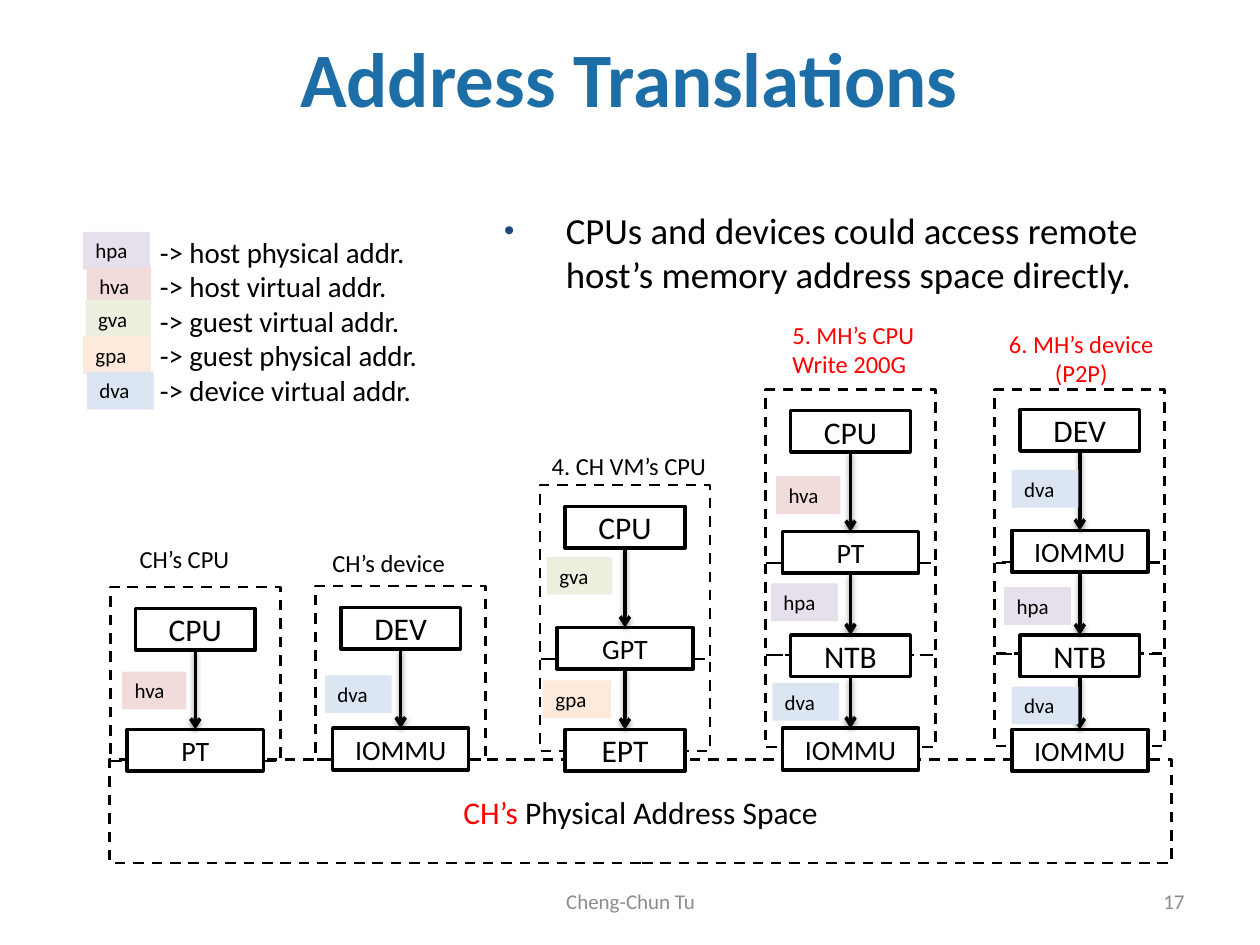
from itertools import pairwise
from lxml import etree
from pptx import Presentation, util as u
from pptx.dml.color import RGBColor
from pptx.enum import dml, shapes, text
from pptx.oxml import parse_xml
from pptx.oxml.ns import nsdecls, qn

THEME = {
    "font": "Calibri",
    "title": "1D6EA7", "ink": "000000", "accent": "FF0000",
    "muted": "8C8C8C", "bullet": "1F497D", "paper": "FFFFFF",
    "title_pt": 44, "body_pt": 21, "node_pt": 18, "table_pt": 16,
    "legend_pt": 16.5, "caption_pt": 14, "tag_pt": 12,
}
TAGS = {
    "hpa": ("E6E0EC", 0.53), "hva": ("F2DCDB", 0.51), "gva": ("EBF1DE", 0.52),
    "gpa": ("FDEADA", 0.54), "dva": ("DCE6F2", 0.53),
}
TITLE = "Address Translations"
BODY = "CPUs and devices could access remote host’s memory address space directly."
LEGEND = [
    ("hpa", "-> host physical addr.", 0.66, 1.84),
    ("hva", "-> host virtual addr.", 0.69, 2.12),
    ("gva", "-> guest virtual addr.", 0.68, 2.38),
    ("gpa", "-> guest physical addr.", 0.66, 2.67),
    ("dva", "-> device virtual addr.", 0.69, 2.95),
]
COLUMNS = [
    {"center": 6.75, "caption": ["5. MH’s CPU", "Write 200G"], "color": "accent",
     "caption_at": (6.19, 2.49, 1.19, 0.57),
     "zones": [(3.09, 1.38), (4.47, 0.73), (5.2, 0.73)],
     "nodes": [("CPU", 3.26), ("PT", 4.22), ("NTB", 5.04), ("IOMMU", 5.78)],
     "tags": [("hva", 6.16, 3.78), ("hpa", 6.12, 4.63), ("dva", 6.13, 5.42)]},
    {"center": 4.96, "caption": ["4. CH VM’s CPU"], "color": "ink",
     "caption_at": (4.28, 3.53, 1.69, 0.34),
     "zones": [(3.85, 1.38), (5.23, 0.73)],
     "nodes": [("CPU", 4.02), ("GPT", 4.98), ("EPT", 5.79)],
     "tags": [("gva", 4.34, 4.42), ("gpa", 4.31, 5.4)]},
    {"center": 1.55, "caption": ["CH’s CPU"], "color": "ink",
     "caption_at": (1.01, 4.27, 1.1, 0.34),
     "zones": [(4.66, 1.38)],
     "nodes": [("CPU", 4.83), ("PT", 5.79)],
     "tags": [("hva", 0.97, 5.33)]},
    {"center": 3.18, "caption": ["CH’s device"], "color": "ink",
     "caption_at": (2.54, 4.3, 1.36, 0.34),
     "zones": [(4.65, 1.38)],
     "nodes": [("DEV", 4.82), ("IOMMU", 5.78)],
     "tags": [("dva", 2.58, 5.36)]},
    {"center": 8.57, "caption": ["6. MH’s device", "(P2P)"], "color": "accent",
     "caption_at": (7.91, 2.56, 1.37, 0.57),
     "zones": [(3.09, 1.38), (4.46, 0.73), (5.19, 0.73)],
     "nodes": [("DEV", 3.25), ("IOMMU", 4.21), ("NTB", 5.04), ("IOMMU", 5.79)],
     "tags": [("dva", 8.03, 3.73), ("hpa", 7.97, 4.66), ("dva", 8.03, 5.45)]},
]
WIDE_NODES = {"PT", "GPT", "IOMMU"}
ZONE_W, NODE_W, WIDE_W, NODE_H, TAG_H = 1.35, 0.95, 1.08, 0.33, 0.3
LEFT, CENTER, RIGHT = text.PP_ALIGN.LEFT, text.PP_ALIGN.CENTER, text.PP_ALIGN.RIGHT
MIDDLE, TOP = text.MSO_ANCHOR.MIDDLE, text.MSO_ANCHOR.TOP


def rgb(color):
    return RGBColor.from_string(THEME.get(color, color))


def add_run(p, words, pt, color="ink", bold=False):
    r = p.add_run()
    r.text = words
    r.font.name = THEME["font"]
    r.font.size = u.Pt(pt)
    r.font.bold = bold
    r.font.color.rgb = rgb(color)


def write(sp, lines, pt, color="ink", aligns=(LEFT,), anchor=TOP, wrap=False):
    tf = sp.text_frame
    tf.word_wrap = wrap
    tf.vertical_anchor = anchor
    for i, line in enumerate(lines):
        p = tf.add_paragraph() if i else tf.paragraphs[0]
        p.alignment = aligns[min(i, len(aligns) - 1)]
        add_run(p, line, pt, color)


def add_rect(s, at, fill=None, line_pt=None, dashed=False):
    sp = s.shapes.add_shape(shapes.MSO_SHAPE.RECTANGLE, *map(u.Inches, at))
    sp.shadow.inherit = False
    if fill:
        sp.fill.solid()
        sp.fill.fore_color.rgb = rgb(fill)
    else:
        sp.fill.background()
    if line_pt:
        sp.line.color.rgb = rgb("ink")
        sp.line.width = u.Pt(line_pt)
        if dashed:
            sp.line.dash_style = dml.MSO_LINE.DASH
    else:
        sp.line.fill.background()
    return sp


def add_text(s, at, lines, pt, **style):
    write(s.shapes.add_textbox(*map(u.Inches, at)), lines, pt, **style)


def add_tag(s, name, x, y):
    fill, w = TAGS[name]
    write(add_rect(s, (x, y, w, TAG_H), fill), [name], THEME["tag_pt"])


def add_node(s, name, center, y):
    wide = name in WIDE_NODES
    w = WIDE_W if wide else NODE_W
    sp = add_rect(s, (center - w / 2, y, w, NODE_H), "paper", 2)
    write(sp, [name], THEME["table_pt" if wide else "node_pt"],
          aligns=(CENTER,), anchor=MIDDLE)
    return sp


def add_arrow(s, upper, lower):
    cn = s.shapes.add_connector(shapes.MSO_CONNECTOR.STRAIGHT, 0, 0, 0, 0)
    cn.begin_connect(upper, 2)
    cn.end_connect(lower, 0)
    cn.line.color.rgb = rgb("ink")
    cn.line.width = u.Pt(2)
    etree.SubElement(cn.line._get_or_add_ln(), qn("a:tailEnd"), type="arrow")
    cn._element.spPr.append(parse_xml(
        f'<a:effectLst {nsdecls("a")}><a:outerShdw blurRad="39370" dist="20320" '
        'dir="5400000" rotWithShape="0"><a:srgbClr val="000000">'
        '<a:alpha val="38000"/></a:srgbClr></a:outerShdw></a:effectLst>'))


def add_column(s, col):
    for y, h in col["zones"]:
        add_rect(s, (col["center"] - ZONE_W / 2, y, ZONE_W, h), None, 1.5, True)
    nodes = [add_node(s, name, col["center"], y) for name, y in col["nodes"]]
    for upper, lower in pairwise(nodes):
        add_arrow(s, upper, lower)
    add_text(s, col["caption_at"], col["caption"], THEME["caption_pt"],
             color=col["color"], aligns=(LEFT, CENTER if "(P2P)" in col["caption"] else LEFT))
    for tag in col["tags"]:
        add_tag(s, *tag)


def place(sp, at):
    sp.left, sp.top, sp.width, sp.height = map(u.Inches, at)
    tf = sp.text_frame
    tf.auto_size = text.MSO_AUTO_SIZE.NONE
    tf.word_wrap = True
    return tf


def fill_placeholders(s):
    tf = place(s.shapes.title, (0.35, 0.21, 9.29, 0.79))
    tf.vertical_anchor = MIDDLE
    p = tf.paragraphs[0]
    p.alignment = CENTER
    add_run(p, TITLE, THEME["title_pt"], "title", True)

    p = place(s.placeholders[1], (3.9, 1.6, 5.4, 1.07)).paragraphs[0]
    p.space_before = u.Pt(0)
    pPr = p._p.get_or_add_pPr()
    pPr.set("marL", str(u.Inches(0.49)))
    pPr.set("indent", str(u.Inches(-0.49)))
    color = etree.SubElement(pPr, qn("a:buClr"))
    etree.SubElement(color, qn("a:srgbClr"), val=THEME["bullet"])
    etree.SubElement(pPr, qn("a:buSzPct"), val="80000")
    etree.SubElement(pPr, qn("a:buChar"), char="•")
    add_run(p, BODY, THEME["body_pt"])


def main():
    prs = Presentation()
    prs.slide_width, prs.slide_height = u.Inches(10), u.Inches(7.5)
    s = prs.slides.add_slide(prs.slide_layouts[1])
    fill_placeholders(s)

    space = add_rect(s, (0.87, 6.03, 8.43, 0.82), None, 1.5, True)
    write(space, ["CH’s "], THEME["node_pt"], "accent", (CENTER,), MIDDLE, True)
    add_run(space.text_frame.paragraphs[0], "Physical Address Space", THEME["node_pt"])

    for col in COLUMNS:
        add_column(s, col)

    add_text(s, (1.17, 1.81, 2.82, 1.49), [row[1] for row in LEGEND], THEME["legend_pt"])
    for name, _, x, y in LEGEND:
        add_tag(s, name, x, y)

    for at, words, align in [((7.17, 6.95, 2.33, 0.4), "17", RIGHT),
                             ((3.42, 6.95, 3.17, 0.4), "Cheng-Chun Tu", CENTER)]:
        add_text(s, at, [words], THEME["tag_pt"], color="muted",
                 aligns=(align,), anchor=MIDDLE, wrap=True)
    prs.save("out.pptx")


if __name__ == "__main__":
    main()
